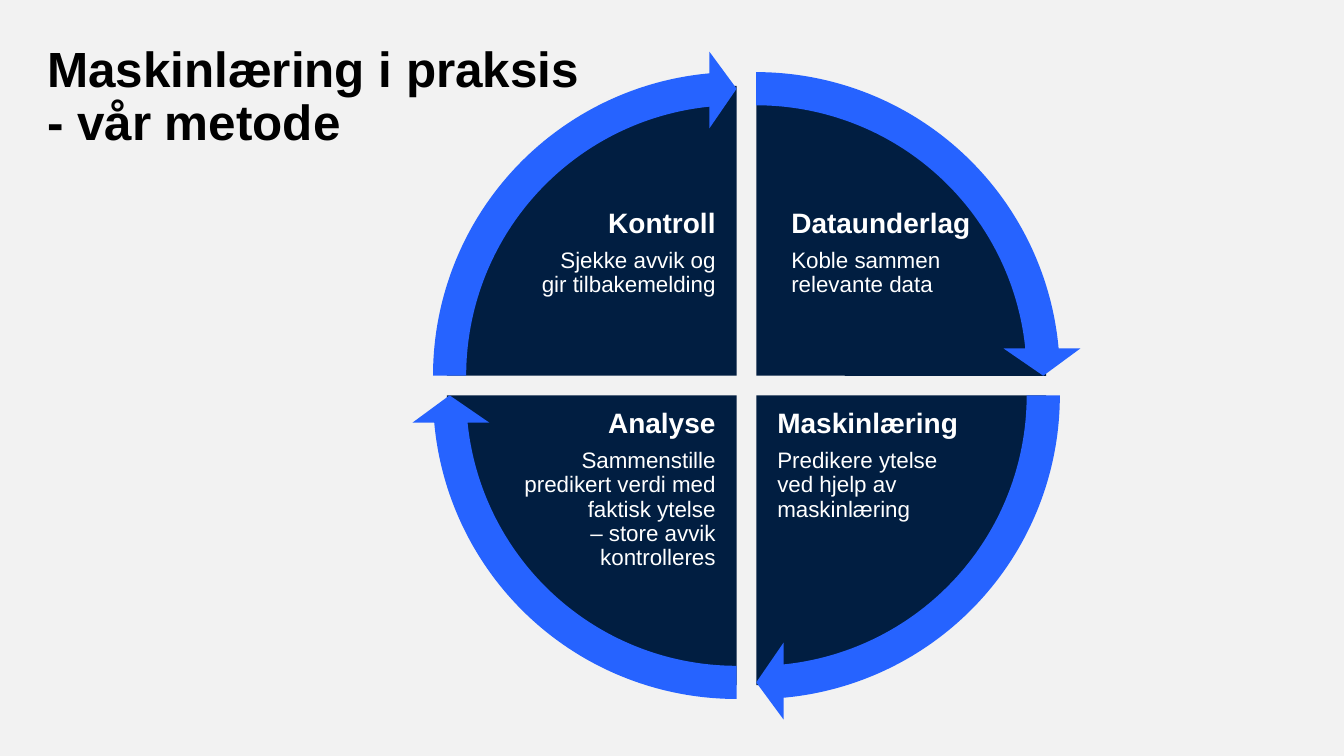
from pptx import Presentation
from pptx.dml.color import RGBColor
from pptx.enum.shapes import MSO_SHAPE
from pptx.enum.text import MSO_ANCHOR, PP_ALIGN
from pptx.util import Pt

PIE, ARROW = MSO_SHAPE.PIE, MSO_SHAPE.CIRCULAR_ARROW
LEFT, RIGHT = PP_ALIGN.LEFT, PP_ALIGN.RIGHT
TOP, MIDDLE = MSO_ANCHOR.TOP, MSO_ANCHOR.MIDDLE
COLORS = {"back": "F2F2F2", "navy": "011E41", "blue": "2663FF",
          "white": "FFFFFF", "black": "000000"}
FONT = "Arial"
# Angles count in units of 100000/60000 degrees: a full turn is 216.
TURN, QUARTER, SWEEP = 216, 54, 50.725
# Clockwise from the top right: side, row, heading, text, left indent
STEPS = [
    (1, -1, "Dataunderlag", "Koble sammen\vrelevante data", 10),
    (1, 1, "Maskinlæring", "Predikere ytelse\vved hjelp av maskinlæring", 0),
    (-1, 1, "Analyse", "Sammenstille predikert verdi med faktisk ytelse"
     "\v– store avvik kontrolleres", 0),
    (-1, -1, "Kontroll", "Sjekke avvik og\vgir tilbakemelding", 0),
]


def color(name):
    return RGBColor.from_string(COLORS[name])


def style(para, size, name, bold, align=LEFT):
    para.alignment = align
    para.line_spacing = 0.9
    font = para.font
    font.name, font.size, font.bold = FONT, Pt(size), bold
    font.color.rgb = color(name)


def inset(frame, side, end, anchor):
    frame.word_wrap = True
    frame.margin_left = frame.margin_right = Pt(side)
    frame.margin_top = frame.margin_bottom = Pt(end)
    frame.vertical_anchor = anchor


def add_title(slide, x, y, w, h):
    title = slide.shapes.title
    title.left, title.top, title.width, title.height = map(Pt, (x, y, w, h))
    frame = title.text_frame
    inset(frame, 7.6, 4, MIDDLE)
    para = frame.paragraphs[0]
    para.text = "Maskinlæring i praksis\v- vår metode"
    style(para, 35.3, "black", True)


def add_round(slide, kind, cx, cy, size, fill, adjust):
    """Add a circular preset centred on a point."""
    shape = slide.shapes.add_shape(
        kind, Pt(cx - size / 2), Pt(cy - size / 2), Pt(size), Pt(size))
    shape.shadow.inherit = False
    shape.fill.solid()
    shape.fill.fore_color.rgb = color(fill)
    shape.line.fill.background()
    for i, value in enumerate(adjust):
        shape.adjustments[i] = value


def add_label(slide, x, y, w, h, head, body, align, indent):
    box = slide.shapes.add_textbox(Pt(x), Pt(y), Pt(w), Pt(h))
    frame = box.text_frame
    inset(frame, 2, 2, TOP)
    frame.margin_left = Pt(2 + indent)
    first, second = frame.paragraphs[0], frame.add_paragraph()
    first.text, second.text = head, body
    style(first, 20, "white", True, align)
    style(second, 16, "white", False, align)
    first.space_after = Pt(7)


def add_cycle(slide, cx, cy, size):
    """Draw four wedges with labels, then the arrows around them."""
    gap, ring = 7, size * 1.123
    wide, high = 152.6, 113
    starts = [(162 + QUARTER * i) % TURN for i in range(len(STEPS))]
    for start, (side, row, head, body, indent) in zip(starts, STEPS):
        add_round(slide, PIE, cx + side * gap, cy + row * gap, size, "navy",
                  (start, (start + QUARTER) % TURN))
        x = cx + 20 if side > 0 else cx - 20 - wide
        y = cy + 15 if row > 0 else cy - 128
        add_label(slide, x, y, wide, high, head, body,
                  LEFT if side > 0 else RIGHT, indent)
    for start, (side, row, *_) in zip(starts, STEPS):
        add_round(slide, ARROW, cx + side * gap, cy + row * gap, ring, "blue",
                  (0.051, 3.275, start + SWEEP, start, 0.059))


def main():
    deck = Presentation()
    deck.slide_width, deck.slide_height = Pt(960), Pt(540)
    slide = deck.slides.add_slide(deck.slide_layouts[5])
    fill = slide.background.fill
    fill.solid()
    fill.fore_color.rgb = color("back")
    add_title(slide, 26, 27.4, 896, 85)
    add_cycle(slide, 533.2, 275.4, 414)
    deck.save("out.pptx")


if __name__ == "__main__":
    main()
